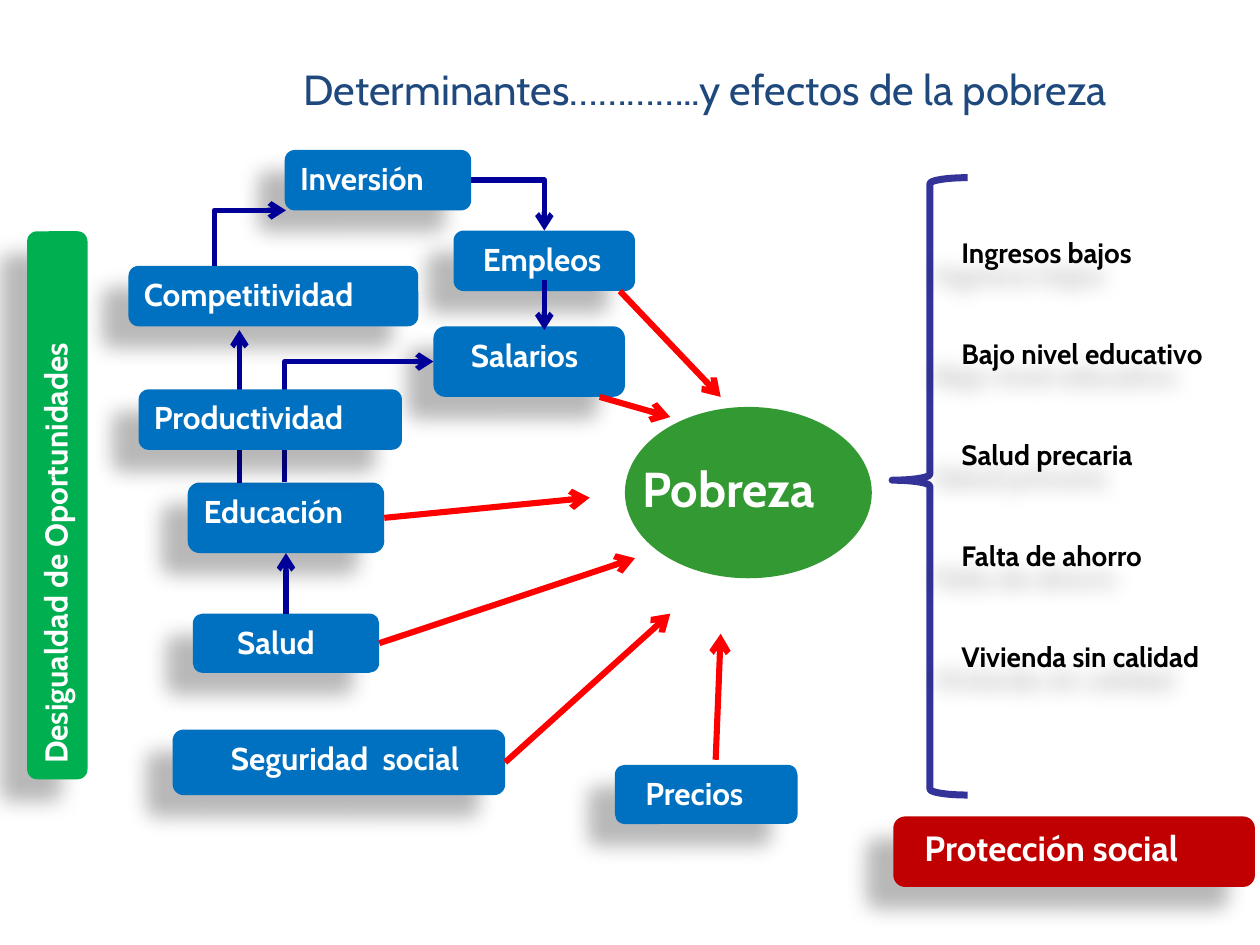
from pptx import Presentation
from pptx.dml.color import RGBColor
from pptx.enum.shapes import MSO_CONNECTOR as Connector, MSO_SHAPE as Preset
from pptx.enum.text import MSO_ANCHOR as Anchor, MSO_AUTO_SIZE as AutoSize, PP_ALIGN as Align
from pptx.oxml import parse_xml
from pptx.oxml.ns import nsdecls, qn
from pptx.oxml.xmlchemy import OxmlElement
from pptx.util import Inches, Pt

WHITE = RGBColor(0xFF, 0xFF, 0xFF)
BLACK = RGBColor(0x00, 0x00, 0x00)
BLUE = RGBColor(0x00, 0x70, 0xC0)
NAVY = RGBColor(0x00, 0x00, 0x99)
INDIGO = RGBColor(0x33, 0x33, 0x99)
TITLE_BLUE = RGBColor(0x1F, 0x49, 0x7D)
RED = RGBColor(0xFF, 0x00, 0x00)
DARK_RED = RGBColor(0xC0, 0x00, 0x00)
GREEN = RGBColor(0x33, 0x99, 0x33)
BRIGHT_GREEN = RGBColor(0x00, 0xB0, 0x50)

TOP, LEFT, BOTTOM, RIGHT = range(4)


class DiagramSlide:
    font_name = "Cabin"

    def __init__(self, slide):
        self.slide = slide
        self.shapes = slide.shapes

    def apply(self, target, values):
        for name, value in values.items():
            setattr(target, name, value)

    def place(self, shape, bounds):
        names = ("left", "top", "width", "height")
        self.apply(shape, dict(zip(names, map(Inches, bounds))))

    def fill_text(self, shape, lines, size, color, bold=True, align=Align.LEFT,
                  anchor=Anchor.TOP, indent=0.1, gap=0):
        frame = shape.text_frame
        self.apply(frame, {
            "text": "\n".join(lines), "word_wrap": True, "auto_size": AutoSize.NONE,
            "vertical_anchor": anchor, "margin_left": Inches(indent),
            "margin_right": Inches(0), "margin_top": Inches(0.05),
            "margin_bottom": Inches(0.05),
        })
        for index, paragraph in enumerate(frame.paragraphs):
            self.apply(paragraph, {
                "alignment": align, "space_before": Pt(gap if index else 0),
            })
            for run in paragraph.runs:
                self.apply(run.font, {"name": self.font_name, "size": Pt(size), "bold": bold})
                run.font.color.rgb = color

    def add_shadow(self, shape):
        shape.shadow.inherit = False
        effects = shape._element.spPr.find(qn("a:effectLst"))
        effects.append(parse_xml(
            f'<a:outerShdw {nsdecls("a")} blurRad="{Pt(11.8)}" dist="{Pt(19.7)}" '
            f'dir="{141 * 60000}" algn="ctr" rotWithShape="0">'
            '<a:srgbClr val="000000"><a:alpha val="28000"/></a:srgbClr></a:outerShdw>'))

    def shape(self, preset, bounds, fill, line=None, width=0, rotation=0):
        shape = self.shapes.add_shape(preset, *map(Inches, bounds))
        shape.shadow.inherit = False
        shape.rotation = rotation
        shape.fill.solid()
        shape.fill.fore_color.rgb = fill
        if line is None:
            shape.line.fill.background()
        else:
            shape.line.color.rgb = line
            shape.line.width = Pt(width)
        return shape

    def box(self, text, bounds, fill=BLUE, size=18, rotation=0, **style):
        box = self.shape(Preset.ROUNDED_RECTANGLE, bounds, fill, rotation=rotation)
        self.add_shadow(box)
        self.fill_text(box, [text], size, WHITE, **style)
        return box

    def text(self, text, bounds, size, color):
        text_box = self.shapes.add_textbox(*map(Inches, bounds))
        self.fill_text(text_box, [text], size, color)

    def arrow(self, start, end, color, width, kind=Connector.STRAIGHT, begin=None, finish=None):
        arrow = self.shapes.add_connector(kind, *map(Inches, start + end))
        arrow.line.color.rgb = color
        arrow.line.width = Pt(width)
        head = OxmlElement("a:tailEnd")
        head.set("type", "arrow")
        arrow.line._get_or_add_ln().append(head)
        arrow._element.spPr.append(OxmlElement("a:effectLst"))
        if begin:
            arrow.begin_connect(*begin)
        if finish:
            arrow.end_connect(*finish)
        return arrow

    def elbow(self, start, end, vertical_first):
        elbow = self.arrow(start, end, NAVY, 3, Connector.ELBOW)
        geometry = elbow._element.spPr.find(qn("a:prstGeom"))
        if vertical_first:
            guide = OxmlElement("a:gd")
            guide.set("name", "adj1")
            guide.set("fmla", "val 0")
            geometry.get_or_add_avLst().append(guide)
        else:
            geometry.set("prst", "bentConnector2")

    def title(self, text, bounds):
        title = self.shapes.title
        self.place(title, bounds)
        self.fill_text(title, [text], 24, TITLE_BLUE, bold=False, indent=0.17)

    def effects(self, items, bounds):
        body = self.slide.placeholders[1]
        self.place(body, bounds)
        self.shapes._spTree.append(body._element)
        self.fill_text(body, items, 16, BLACK, align=Align.JUSTIFY, anchor=Anchor.MIDDLE,
                       indent=0, gap=38.5)
        for paragraph in body.text_frame.paragraphs:
            properties = paragraph._p.get_or_add_pPr()
            properties.set("marL", "0")
            properties.set("indent", "0")
            properties.append(OxmlElement("a:buNone"))
        self.add_shadow(body)


def main():
    presentation = Presentation()
    presentation.slide_width = Inches(10)
    presentation.slide_height = Inches(7.5)
    diagram = DiagramSlide(presentation.slides.add_slide(presentation.slide_layouts[1]))

    diagram.title("Determinantes…………..y efectos de la pobreza", (2.24, 0.45, 7.44, 0.5))

    diagram.box("Inversión", (2.26, 1.19, 1.48, 0.48))
    diagram.box("Empleos", (3.6, 1.83, 1.44, 0.48), indent=0.21)
    diagram.box("Salarios", (3.44, 2.59, 1.52, 0.56), indent=0.27)
    education = diagram.box("Educación", (1.49, 3.83, 1.56, 0.56))
    security = diagram.box("Seguridad  social", (1.37, 5.79, 2.64, 0.52), align=Align.CENTER)
    diagram.box("Precios", (4.88, 6.07, 1.45, 0.47), indent=0.22)
    health = diagram.box("Salud", (1.53, 4.87, 1.48, 0.47), indent=0.33)
    diagram.box("Competitividad", (1.02, 2.11, 2.3, 0.48))
    diagram.box("Protección social", (7.09, 6.48, 2.87, 0.56), DARK_RED, 20, indent=0.22)
    diagram.box("Desigualdad de Oportunidades", (-1.72, 3.77, 4.35, 0.48), BRIGHT_GREEN,
                rotation=270)

    brace = diagram.shape(Preset.RIGHT_BRACE, (7.08, 1.41, 0.6, 4.9), WHITE, INDIGO, 4, 180)
    brace.adjustments[0] = 0.08
    brace.adjustments[1] = 0.51

    diagram.shape(Preset.OVAL, (4.96, 3.23, 1.96, 1.36), GREEN)
    diagram.text("Pobreza", (5, 3.59, 2, 0.57), 28, WHITE)

    diagram.elbow((2.26, 3.83), (3.44, 2.87), vertical_first=True)
    diagram.elbow((1.7, 2.11), (2.27, 1.67), vertical_first=True)
    diagram.elbow((3.74, 1.43), (4.32, 1.83), vertical_first=False)
    diagram.arrow((4.32, 2.22), (4.32, 2.62), NAVY, 3)
    diagram.arrow((1.9, 3.83), (1.9, 2.62), NAVY, 3)
    diagram.arrow((2.27, 4.87), (2.27, 4.39), NAVY, 3,
                  begin=(health, TOP), finish=(education, BOTTOM))

    for start, end, begin in (
        ((3.01, 5.11), (5.04, 4.43), (health, RIGHT)),
        ((3.05, 4.11), (4.68, 3.95), (education, RIGHT)),
        ((4.01, 6.05), (5.32, 4.87), (security, RIGHT)),
        ((4.92, 2.31), (5.72, 3.15), None),
        ((4.76, 3.15), (5.32, 3.31), None),
        ((5.68, 6.03), (5.72, 5.03), None),
    ):
        diagram.arrow(start, end, RED, 3.5, begin=begin)

    diagram.box("Productividad", (1.1, 3.09, 2.09, 0.48))
    diagram.effects(
        ["Ingresos bajos", "Bajo nivel educativo", "Salud precaria", "Falta de ahorro",
         "Vivienda sin calidad"],
        (7.63, 1.46, 2.37, 4.29))

    presentation.save("out.pptx")


if __name__ == "__main__":
    main()
